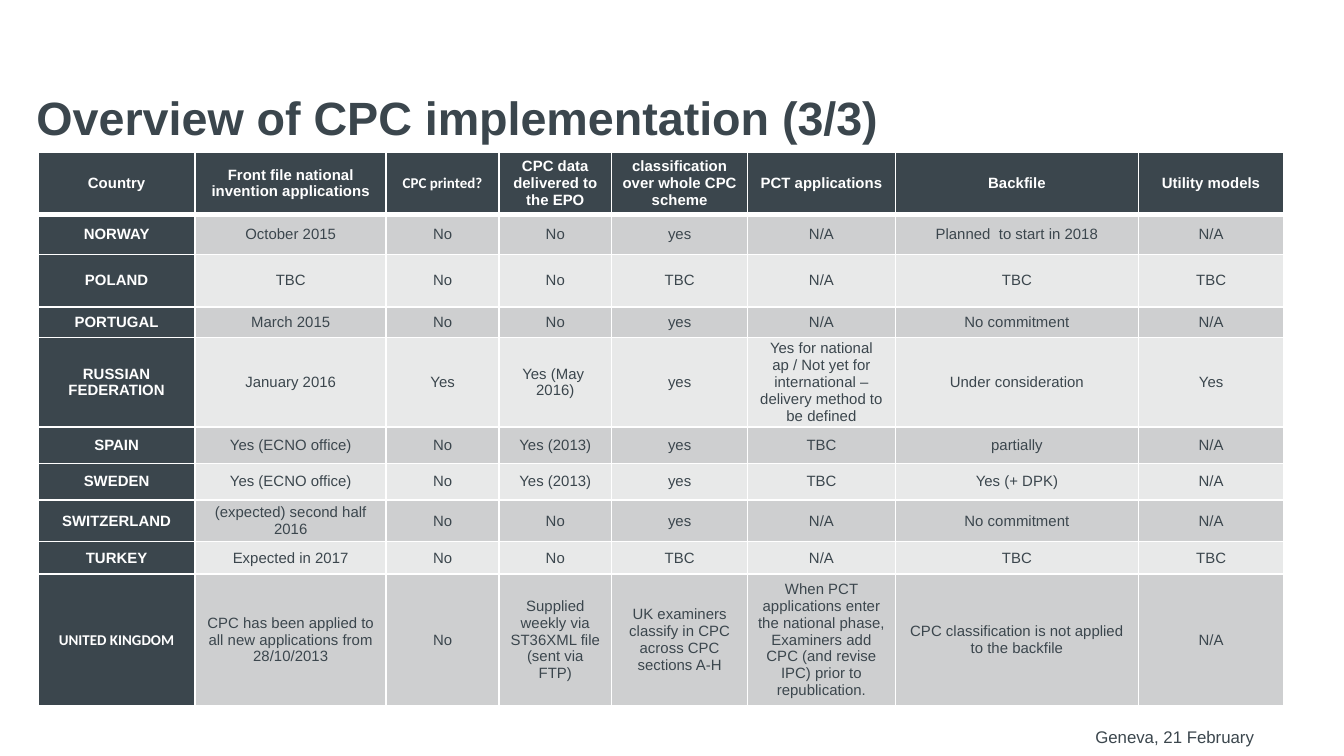
"""Build the slide with the CPC implementation table by country."""
from dataclasses import dataclass

from lxml import etree
from pptx import Presentation
from pptx import util as u
from pptx.dml.color import RGBColor
from pptx.enum import text
from pptx.oxml import ns

DARK, WHITE = "3B464D", "FFFFFF"
BANDS = ("CECFD0", "E8E9E9")
COLUMNS = (2.97, 3.61, 2.13, 2.13, 2.57, 2.79, 4.6, 2.74)
HEADINGS = (
    "Country", "Front file national invention applications", "CPC printed?",
    "CPC data delivered to the EPO", "classification over whole CPC scheme",
    "PCT applications", "Backfile", "Utility models",
)
CALIBRI_LABELS = ("CPC printed?", "UNITED KINGDOM")


@dataclass
class Row:
    height: float
    values: tuple[str, ...]


@dataclass
class Label:
    words: str
    box: tuple[float, float, float, float]
    font: dict
    align: text.PP_ALIGN
    anchor: text.MSO_ANCHOR
    wrap: bool = True
    spacing: float | None = None


ROWS = (
    Row(1.17, HEADINGS),
    Row(0.76, ("NORWAY", "October 2015", "No", "No", "yes", "N/A",
               "Planned  to start in 2018", "N/A")),
    Row(0.99, ("POLAND", "TBC", "No", "No", "TBC", "N/A", "TBC", "TBC")),
    Row(0.58, ("PORTUGAL", "March 2015", "No", "No", "yes", "N/A",
               "No commitment", "N/A")),
    Row(1.55, ("RUSSIAN FEDERATION", "January 2016", "Yes", "Yes (May  2016)", "yes",
               "Yes for national ap / Not yet for international – delivery method to be defined",
               "Under consideration", "Yes")),
    Row(0.69, ("SPAIN", "Yes (ECNO office)", "No", "Yes (2013)", "yes", "TBC",
               "partially", "N/A")),
    Row(0.69, ("SWEDEN", "Yes (ECNO office)", "No", "Yes (2013)", "yes", "TBC",
               "Yes (+ DPK)", "N/A")),
    Row(0.79, ("SWITZERLAND", "(expected) second half 2016", "No", "No", "yes", "N/A",
               "No commitment", "N/A")),
    Row(0.61, ("TURKEY", "Expected in 2017", "No", "No", "TBC", "N/A", "TBC", "TBC")),
    Row(2.49, ("UNITED KINGDOM",
               "CPC has been applied to all new applications from 28/10/2013", "No",
               "Supplied weekly via ST36XML file (sent via FTP)",
               "UK examiners classify in CPC across CPC sections A-H",
               "When PCT applications enter the national phase, Examiners add CPC "
               "(and revise IPC) prior to republication.",
               "CPC classification is not applied to the backfile", "N/A")),
)
LABELS = (
    Label("Geneva, 21 February", (19.99, 13.13, 3.71, 1.02), {"size": u.Pt(9)},
          text.PP_ALIGN.RIGHT, text.MSO_ANCHOR.TOP, wrap=False, spacing=28),
    Label("Overview of CPC implementation (3/3)", (0.69, 0.58, 24, 2.16),
          {"size": u.Pt(25), "bold": True}, text.PP_ALIGN.LEFT, text.MSO_ANCHOR.BOTTOM),
)


def colour(value: str) -> RGBColor:
    return RGBColor.from_string(value)


def write(p, words: str, fill: str, font: dict, align: text.PP_ALIGN) -> None:
    p.alignment = align
    r = p.add_run()
    r.text = words
    for name, value in ({"name": "Arial"} | font).items():
        setattr(r.font, name, value)
    r.font.color.rgb = colour(fill)


def add_label(slide, label: Label) -> None:
    tf = slide.shapes.add_textbox(*map(u.Cm, label.box)).text_frame
    frame = {"word_wrap": label.wrap, "vertical_anchor": label.anchor, "margin_left": 0,
             "margin_right": 0, "margin_top": 0, "margin_bottom": 0}
    for name, value in frame.items():
        setattr(tf, name, value)
    p = tf.paragraphs[0]
    if label.spacing:
        p.line_spacing = u.Pt(label.spacing)
    write(p, label.words, DARK, label.font, label.align)


def add_borders(cell, widths: dict[str, float]) -> None:
    tc_pr = cell._tc.get_or_add_tcPr()
    for side, width in widths.items():
        ln = etree.SubElement(tc_pr, ns.qn(f"a:ln{side}"), w=str(u.Pt(width)))
        fill = etree.SubElement(ln, ns.qn("a:solidFill"))
        etree.SubElement(fill, ns.qn("a:srgbClr"), val=WHITE)


def fill_cell(cell, words: str, row: int, column: int) -> None:
    heading = row == 0 or column == 0
    frame = {"vertical_anchor": text.MSO_ANCHOR.MIDDLE, "margin_left": u.Cm(0.18),
             "margin_right": u.Cm(0.18), "margin_top": 0, "margin_bottom": 0}
    for name, value in frame.items():
        setattr(cell, name, value)
    add_borders(cell, {"L": 1, "R": 1, "T": 3 if row == 1 else 1, "B": 3 if row == 0 else 1})
    cell.fill.solid()
    cell.fill.fore_color.rgb = colour(DARK if heading else BANDS[(row - 1) % 2])
    font = {"size": u.Pt(8), "bold": heading,
            "name": "Calibri" if words in CALIBRI_LABELS else "Arial"}
    write(cell.text_frame.paragraphs[0], words, WHITE if heading else DARK, font,
          text.PP_ALIGN.CENTER)


def add_country_table(slide, rows: tuple[Row, ...]) -> None:
    height = sum(row.height for row in rows)
    table = slide.shapes.add_table(
        len(rows), len(COLUMNS), u.Cm(0.72), u.Cm(2.88), u.Cm(sum(COLUMNS)), u.Cm(height)
    ).table
    for column, width in zip(table.columns, COLUMNS):
        column.width = u.Cm(width)
    for i, row in enumerate(rows):
        table.rows[i].height = u.Cm(row.height)
        for j, words in enumerate(row.values):
            fill_cell(table.cell(i, j), words, i, j)


def main() -> None:
    prs = Presentation()
    prs.slide_width, prs.slide_height = u.Cm(25.4), u.Cm(14.29)
    s = prs.slides.add_slide(prs.slide_layouts[6])
    for label in LABELS:
        add_label(s, label)
    add_country_table(s, ROWS)
    prs.save("out.pptx")


if __name__ == "__main__":
    main()
